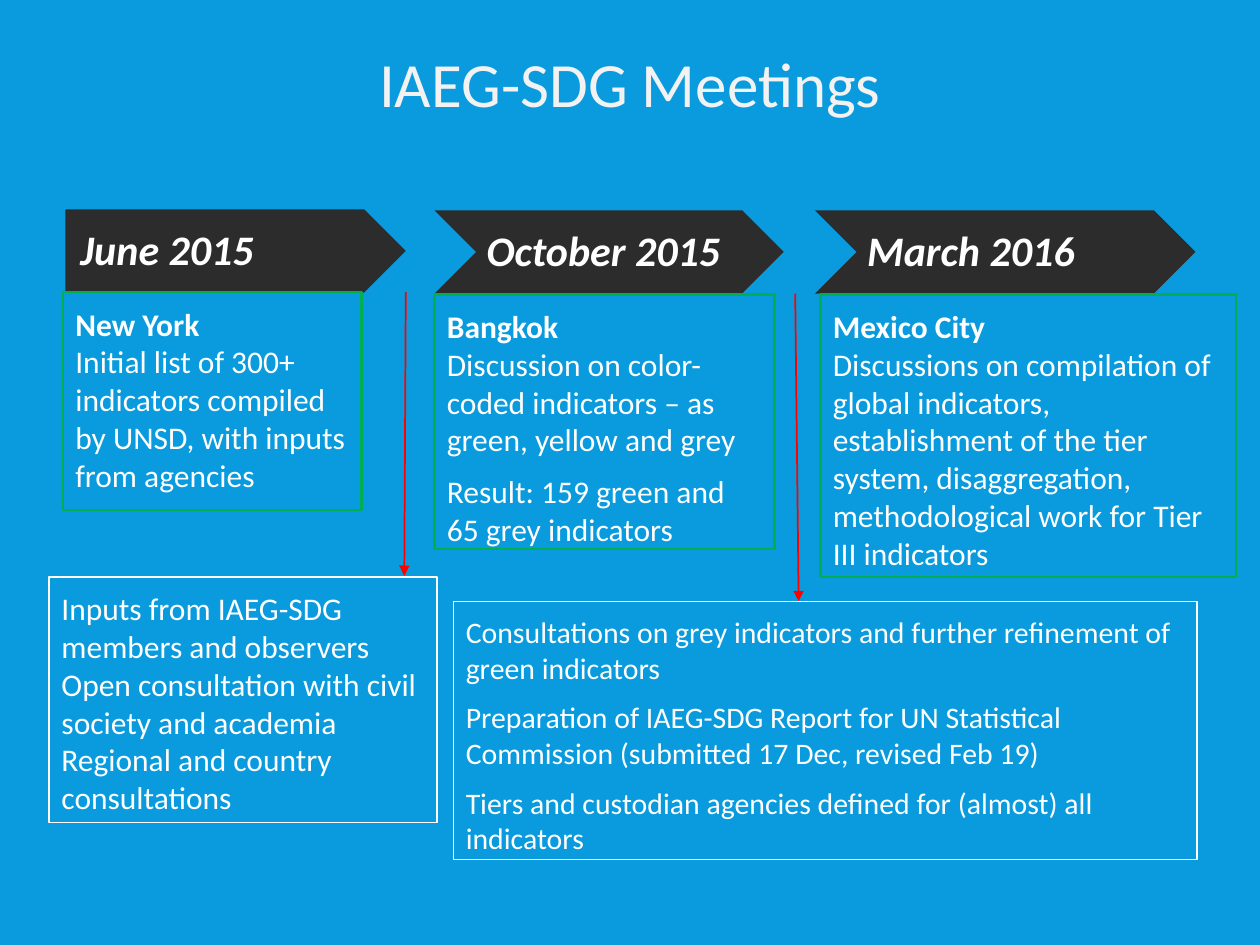
from dataclasses import dataclass

from lxml import etree
from pptx import Presentation
from pptx.dml.color import RGBColor
from pptx.enum.shapes import MSO_CONNECTOR, MSO_SHAPE
from pptx.enum.text import MSO_ANCHOR, MSO_AUTO_SIZE, PP_ALIGN
from pptx.oxml.ns import qn
from pptx.util import Cm, Pt

STRAIGHT = MSO_CONNECTOR.STRAIGHT
PENTAGON, CHEVRON, RECTANGLE = MSO_SHAPE.PENTAGON, MSO_SHAPE.CHEVRON, MSO_SHAPE.RECTANGLE
TOP, MIDDLE = MSO_ANCHOR.TOP, MSO_ANCHOR.MIDDLE
LEFT, CENTER = PP_ALIGN.LEFT, PP_ALIGN.CENTER
NO_AUTOFIT = MSO_AUTO_SIZE.NONE


@dataclass(frozen=True)
class Theme:
    font: str = "Calibri"
    background: RGBColor = RGBColor(0x09, 0x9B, 0xDD)
    title: RGBColor = RGBColor(0xF2, 0xF2, 0xF2)
    banner: RGBColor = RGBColor(0x2C, 0x2C, 0x2C)
    date: RGBColor = RGBColor(0xFF, 0xFF, 0xFF)
    body: RGBColor = RGBColor(0xFE, 0xFE, 0xFE)
    meeting_line: RGBColor = RGBColor(0x00, 0xB0, 0x50)
    followup_line: RGBColor = RGBColor(0xFF, 0xFF, 0xFF)
    arrow: RGBColor = RGBColor(0xFF, 0x00, 0x00)
    title_size: int = 36
    date_size: int = 24
    body_size: int = 18
    small_size: int = 17


THEME = Theme()
PADDING = 0.25
PARAGRAPH_GAP = 8

# Boxes are left, top, width, height in cm
TITLE_BOX = (1.27, 0.76, 22.86, 3.18)
MEETINGS = [
    ("June 2015", PENTAGON, (1.32, 4.22, 6.86, 1.68), (1.27, 5.89, 6.02, 4.39), "New York",
     [("Initial list of 300+ indicators compiled by UNSD, with inputs from agencies", 0)]),
    ("October 2015", CHEVRON, (8.76, 4.24, 7.04, 1.68), (8.76, 5.94, 6.86, 5.13), "Bangkok",
     [("Discussion on color-coded indicators – as green, yellow and grey", 0),
      ("Result: 159 green and 65 grey indicators", PARAGRAPH_GAP)]),
    ("March 2016", CHEVRON, (16.43, 4.24, 7.67, 1.68), (16.54, 5.94, 8.38, 5.69), "Mexico City",
     [("Discussions on compilation of global indicators, establishment of the tier system, "
       "disaggregation, methodological work for Tier III indicators", 0)]),
]
# Box, type size, gap between paragraphs, texts, arrow start and end
FOLLOWUPS = [
    ((0.99, 11.63, 7.82, 4.95), THEME.body_size, 0,
     ["Inputs from IAEG-SDG members and observers",
      "Open consultation with civil society and academia",
      "Regional and country consultations"],
     (8.18, 5.89), (8.15, 11.61)),
    ((9.14, 12.12, 14.99, 5.21), THEME.small_size, PARAGRAPH_GAP,
     ["Consultations on grey indicators and further refinement of green indicators",
      "Preparation of IAEG-SDG Report for UN Statistical Commission "
      "(submitted 17 Dec, revised Feb 19)",
      "Tiers and custodian agencies defined for (almost) all indicators"],
     (16.03, 5.92), (16.1, 12.12)),
]


def lengths(values):
    return [Cm(value) for value in values]


def prepare_frame(frame, anchor, vertical_padding=PADDING):
    frame.word_wrap = True
    frame.auto_size = NO_AUTOFIT
    frame.vertical_anchor = anchor
    frame.margin_left = frame.margin_right = Cm(PADDING)
    frame.margin_top = frame.margin_bottom = Cm(vertical_padding)


def write(paragraph, text, size, color, bold=False, italic=False, align=LEFT, gap=0):
    paragraph.alignment = align
    paragraph.space_before = Pt(gap)
    run = paragraph.add_run()
    run.text = text
    font = run.font
    font.name, font.size = THEME.font, Pt(size)
    font.bold, font.italic = bold, italic
    font.color.rgb = color


def add_panel(slide, box, line_color, line_width, size, items):
    """Outlined panel; items are (text, gap before, bold)."""
    panel = slide.shapes.add_shape(RECTANGLE, *lengths(box))
    panel.shadow.inherit = False
    panel.fill.background()
    panel.line.color.rgb = line_color
    panel.line.width = Pt(line_width)
    frame = panel.text_frame
    prepare_frame(frame, TOP)
    for index, (text, gap, bold) in enumerate(items):
        paragraph = frame.add_paragraph() if index else frame.paragraphs[0]
        write(paragraph, text, size, THEME.body, bold=bold, gap=gap)


def add_title(slide, box, text):
    title = slide.shapes.title
    title.left, title.top, title.width, title.height = lengths(box)
    prepare_frame(title.text_frame, TOP, 0.13)
    write(title.text_frame.paragraphs[0], text, THEME.title_size, THEME.title, align=CENTER)


def add_banner(slide, box, outline, date):
    left, top, _, _ = box
    banner = slide.shapes.add_shape(outline, *lengths(box))
    banner.shadow.inherit = False
    banner.fill.solid()
    banner.fill.fore_color.rgb = THEME.banner
    banner.line.fill.background()

    # The date starts after the notch of a chevron
    indent = 0.8 if outline == CHEVRON else 0.05
    label = slide.shapes.add_textbox(*lengths((left + indent, top + 0.36, 6.27, 0.86)))
    prepare_frame(label.text_frame, MIDDLE)
    write(label.text_frame.paragraphs[0], date, THEME.date_size, THEME.date,
          bold=True, italic=True)


def add_meeting(slide, banner_box, panel_box, outline, date, city, notes):
    add_banner(slide, banner_box, outline, date)
    items = [(city, 0, True)] + [(text, gap, False) for text, gap in notes]
    add_panel(slide, panel_box, THEME.meeting_line, 1.5, THEME.body_size, items)


def add_arrow(slide, start, end):
    arrow = slide.shapes.add_connector(STRAIGHT, *lengths(start + end))
    arrow.line.color.rgb = THEME.arrow
    arrow.line.width = Pt(1)
    etree.SubElement(arrow.line._get_or_add_ln(), qn("a:tailEnd"), type="triangle")
    etree.SubElement(arrow._element.spPr, qn("a:effectLst"))


def add_followup(slide, box, size, gap, texts, start, end):
    items = [(text, gap if index else 0, False) for index, text in enumerate(texts)]
    add_panel(slide, box, THEME.followup_line, 0.75, size, items)
    add_arrow(slide, start, end)


def main():
    deck = Presentation()
    deck.slide_width, deck.slide_height = Cm(25.4), Cm(19.05)
    slide = deck.slides.add_slide(deck.slide_layouts.get_by_name("Title Only"))
    slide.background.fill.solid()
    slide.background.fill.fore_color.rgb = THEME.background

    add_title(slide, TITLE_BOX, "IAEG-SDG Meetings")
    # Meetings in time order
    for date, outline, banner_box, panel_box, city, notes in MEETINGS:
        add_meeting(slide, banner_box, panel_box, outline, date, city, notes)
    # Work between the meetings
    for followup in FOLLOWUPS:
        add_followup(slide, *followup)
    deck.save("out.pptx")


if __name__ == "__main__":
    main()
